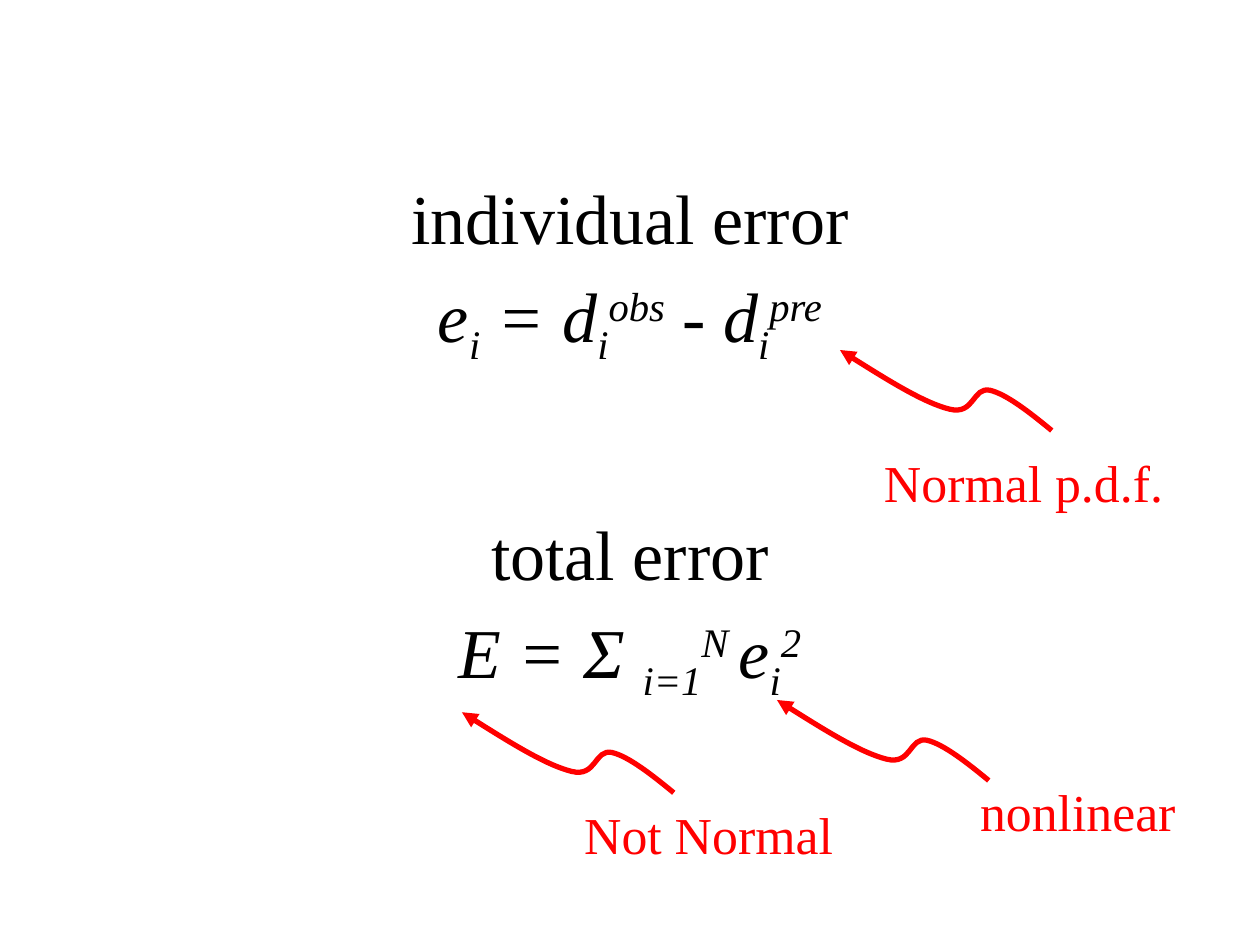
"""Build a slide on individual and total error with red curved callouts."""
from lxml import etree
from pptx import Presentation
from pptx.dml.color import RGBColor
from pptx.enum.text import PP_ALIGN
from pptx.oxml.ns import qn
from pptx.util import Pt

CENTER = PP_ALIGN.CENTER
BLANK = 6
SUB, SUP = -25000, 30000
CURVE = [
    [(23.8, 15.1), (48.2, 30.2), (62.6, 33.8)],
    [(77, 37.4), (75.6, 20.9), (85.7, 23)],
    [(95, 25.2), (108, 35.3), (121, 46)],
]


def color(code):
    return RGBColor.from_string(code)


def write(para, text, size=40, fill="000000", italic=False, base=0):
    run = para.add_run()
    run.text = text
    font = run.font
    font.name = "Times New Roman"
    font.size = Pt(size)
    font.italic = italic
    font.color.rgb = color(fill)
    if base:
        run._r.get_or_add_rPr().set("baseline", str(base))


class Deck:
    def __init__(self):
        self.file = Presentation()
        self.file.slide_width, self.file.slide_height = Pt(720), Pt(540)
        self.slide = self.file.slides.add_slide(self.file.slide_layouts[BLANK])
        self.red = "FF0000"

    def frame(self, left, top, width, height):
        box = self.slide.shapes.add_textbox(Pt(left), Pt(top), Pt(width), Pt(height))
        box.text_frame.word_wrap = True
        return box.text_frame

    def space(self, para, line=None):
        para.alignment = CENTER
        if line:
            para.line_spacing = line
        gap = etree.SubElement(para._p.get_or_add_pPr(), qn("a:spcBef"))
        etree.SubElement(gap, qn("a:spcPct")).set("val", "20000")

    def formula(self, top, title, parts):
        body = self.frame(0, top, 720, 126)
        head = body.paragraphs[0]
        self.space(head)
        write(head, title)
        para = body.add_paragraph()
        self.space(para)
        for text, base in parts:
            write(para, text, italic=True, base=base)

    def label(self, left, top, text):
        para = self.frame(left, top, 222, 42).paragraphs[0]
        self.space(para, line=0.9)
        write(para, text, size=29.6, fill=self.red)

    def curve(self, left, top):
        pen = self.slide.shapes.build_freeform(0, 0)
        pen.add_line_segments([(Pt(x), Pt(y)) for *_, (x, y) in CURVE], close=False)
        shape = pen.convert_to_shape(Pt(left), Pt(top))
        shape.shadow.inherit = False
        shape.fill.background()
        shape.line.color.rgb = color(self.red)
        shape.line.width = Pt(3)
        for step, bend in zip(list(shape._element.iter(qn("a:lnTo"))), CURVE):
            cubic = etree.Element(qn("a:cubicBezTo"))
            for x, y in bend:
                spot = etree.SubElement(cubic, qn("a:pt"))
                spot.set("x", str(Pt(x)))
                spot.set("y", str(Pt(y)))
            step.getparent().replace(step, cubic)
        tip = etree.SubElement(shape.line._get_or_add_ln(), qn("a:headEnd"))
        tip.set("type", "triangle")


def main():
    deck = Deck()
    deck.formula(96, "individual error", [
        ("e", 0), ("i", SUB), (" = d", 0), ("i", SUB), ("obs", SUP),
        (" - d", 0), ("i", SUB), ("pre", SUP)])
    deck.formula(288, "total error", [
        ("E = Σ ", 0), ("i=1", SUB), ("N ", SUP), ("e", 0), ("i", SUB), ("2", SUP)])
    for left, top in [(480, 200), (444, 400), (264, 407)]:
        deck.curve(left, top)
    for left, top, text in [(474, 258, "Normal p.d.f."),
                            (505, 446, "nonlinear"),
                            (294, 459, "Not Normal")]:
        deck.label(left, top, text)
    deck.file.save("out.pptx")


if __name__ == "__main__":
    main()
